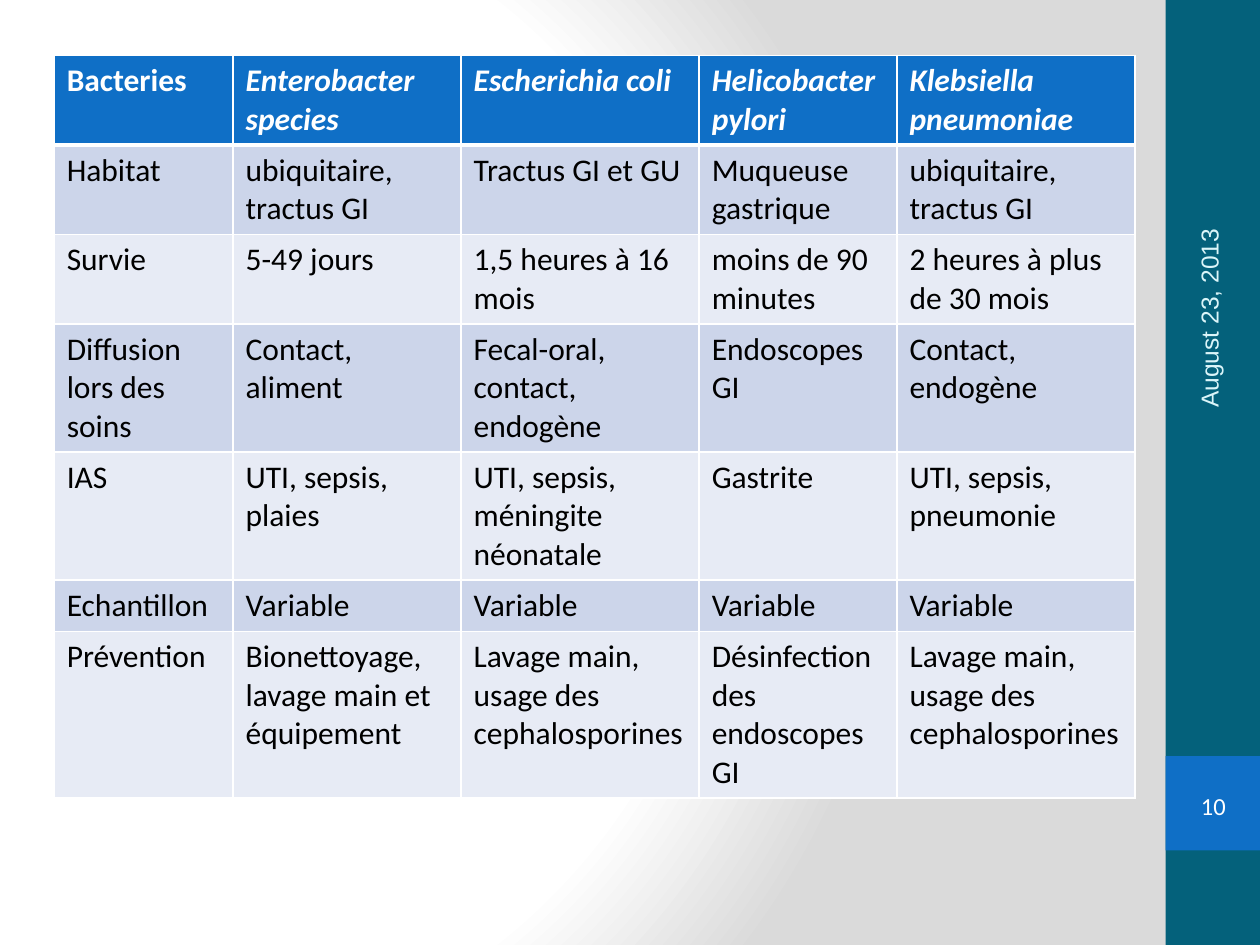
from dataclasses import dataclass

from lxml.etree import SubElement
from pptx import Presentation
from pptx.dml.color import RGBColor
from pptx.enum.shapes import MSO_SHAPE
from pptx.enum.text import MSO_ANCHOR, PP_ALIGN
from pptx.oxml import parse_xml
from pptx.oxml.ns import nsdecls, qn
from pptx.slide import Slide
from pptx.util import Inches, Pt

COLOURS = {
    "white": "FFFFFF",
    "black": "000000",
    "backdrop": "DADADA",
    "sidebar": "04617B",
    "accent": "0F6FC6",
    "odd_row": "CCD5EA",
    "even_row": "E7EBF5",
    "date": "DBF5F9",
}
COLUMN_WIDTHS = (1.42, 1.81, 1.89, 1.57, 1.89)
ROW_HEIGHT = 0.41
BACTERIA_ROWS = (
    ("Bacteries", "Enterobacter species", "Escherichia coli",
     "Helicobacter pylori", "Klebsiella pneumoniae"),
    ("Habitat", "ubiquitaire, tractus GI", "Tractus GI et GU",
     "Muqueuse gastrique", "ubiquitaire, tractus GI"),
    ("Survie", "5-49 jours", "1,5 heures à 16 mois",
     "moins de 90 minutes", "2 heures à plus de 30 mois"),
    ("Diffusion lors des soins", "Contact, aliment", "Fecal-oral, contact, endogène",
     "Endoscopes GI", "Contact, endogène"),
    ("IAS", "UTI, sepsis, plaies", "UTI, sepsis, méningite néonatale",
     "Gastrite", "UTI, sepsis, pneumonie"),
    ("Echantillon", "Variable", "Variable", "Variable", "Variable"),
    ("Prévention", "Bionettoyage, lavage main et équipement",
     "Lavage main, usage des cephalosporines", "Désinfection des endoscopes GI",
     "Lavage main, usage des cephalosporines"),
)


@dataclass(frozen=True)
class Panel:
    """A filled rectangle of the right-hand sidebar."""

    top: float
    height: float
    colour: str


@dataclass(frozen=True)
class TextStyle:
    """Character formatting shared by a whole paragraph."""

    size: int
    family: str
    colour: str
    bold: bool = False
    italic: bool = False


PANELS = (Panel(0, 7.5, "sidebar"), Panel(6, 0.75, "accent"))


def rgb(name: str) -> RGBColor:
    """Look up a named colour."""
    return RGBColor.from_string(COLOURS[name])


def write_text(text_frame, text: str, style: TextStyle) -> None:
    """Fill a text frame with one styled paragraph."""
    text_frame.text = text
    font = text_frame.paragraphs[0].font
    font.size = Pt(style.size)
    font.name = style.family
    font.bold = style.bold
    font.italic = style.italic
    font.color.rgb = rgb(style.colour)


def set_background(slide: Slide) -> None:
    """Give the slide a circular gradient background."""
    stops = "".join(
        f'<a:gs pos="{position * 1000}"><a:srgbClr val="{COLOURS[name]}"/></a:gs>'
        for position, name in ((0, "white"), (75, "white"), (100, "backdrop"))
    )
    background = parse_xml(
        f'<p:bg {nsdecls("p", "a")}><p:bgPr><a:gradFill rotWithShape="1">'
        f'<a:gsLst>{stops}</a:gsLst><a:path path="circle">'
        '<a:fillToRect l="20000" t="50000" r="100000" b="50000"/></a:path>'
        "</a:gradFill><a:effectLst/></p:bgPr></p:bg>"
    )
    slide.element.cSld.insert(0, background)


def add_panel(slide: Slide, panel: Panel) -> None:
    """Draw one sidebar panel."""
    shape = slide.shapes.add_shape(
        MSO_SHAPE.RECTANGLE, Inches(9.25), Inches(panel.top),
        Inches(0.75), Inches(panel.height))
    shape.shadow.inherit = False
    shape.fill.solid()
    shape.fill.fore_color.rgb = rgb(panel.colour)
    shape.line.fill.background()


def set_borders(cell, top: int, bottom: int) -> None:
    """Draw white cell borders, with top and bottom widths in points."""
    properties = cell._tc.get_or_add_tcPr()
    for side, width in (("L", 1), ("R", 1), ("T", top), ("B", bottom)):
        line = SubElement(properties, qn(f"a:ln{side}"), w=str(Pt(width)))
        fill = SubElement(line, qn("a:solidFill"))
        SubElement(fill, qn("a:srgbClr"), val=COLOURS["white"])


def add_bacteria_table(slide: Slide) -> None:
    """Add the table comparing the bacteria."""
    frame = slide.shapes.add_table(
        len(BACTERIA_ROWS), len(COLUMN_WIDTHS), Inches(0.43), Inches(0.44),
        Inches(sum(COLUMN_WIDTHS)), Inches(5.81))
    table = frame.table
    for column, width in zip(table.columns, COLUMN_WIDTHS):
        column.width = Inches(width)
    for row_index, texts in enumerate(BACTERIA_ROWS):
        table.rows[row_index].height = Inches(ROW_HEIGHT)
        header = row_index == 0
        band = "odd_row" if row_index % 2 else "even_row"
        for column_index, text in enumerate(texts):
            cell = table.cell(row_index, column_index)
            set_borders(cell, 3 if row_index == 1 else 1, 3 if header else 1)
            cell.fill.solid()
            cell.fill.fore_color.rgb = rgb("accent" if header else band)
            write_text(cell.text_frame, text, TextStyle(
                18, "Calibri", "white" if header else "black",
                bold=header, italic=header and column_index > 0))
    frame.height = Inches(5.81)


def add_date(slide: Slide) -> None:
    """Add the date reading upwards along the sidebar."""
    date = slide.shapes.add_textbox(
        Inches(8.26), Inches(1.8), Inches(2.67), Inches(0.4))
    date.rotation = 270
    date.text_frame.word_wrap = True
    date.text_frame.vertical_anchor = MSO_ANCHOR.MIDDLE
    write_text(date.text_frame, "August 23, 2013", TextStyle(14, "Arial", "date"))


def add_slide_number(slide: Slide) -> None:
    """Add the slide number on the accent panel."""
    number = slide.shapes.add_shape(
        MSO_SHAPE.DOUBLE_BRACKET, Inches(9.33), Inches(6.18), Inches(0.6), Inches(0.43))
    number.adjustments[0] = 0.18
    number.shadow.inherit = False
    number.fill.background()
    number.line.fill.background()
    text_frame = number.text_frame
    text_frame.margin_left = text_frame.margin_right = 0
    text_frame.margin_top = text_frame.margin_bottom = 0
    text_frame.vertical_anchor = MSO_ANCHOR.MIDDLE
    write_text(text_frame, "10", TextStyle(14, "Calibri", "white"))
    text_frame.paragraphs[0].alignment = PP_ALIGN.CENTER


def main() -> None:
    """Build and save the presentation."""
    presentation = Presentation()
    presentation.slide_width = Inches(10)
    presentation.slide_height = Inches(7.5)
    slide = presentation.slides.add_slide(presentation.slide_layouts[6])
    set_background(slide)
    for panel in PANELS:
        add_panel(slide, panel)
    add_bacteria_table(slide)
    add_date(slide)
    add_slide_number(slide)
    presentation.save("out.pptx")


if __name__ == "__main__":
    main()
